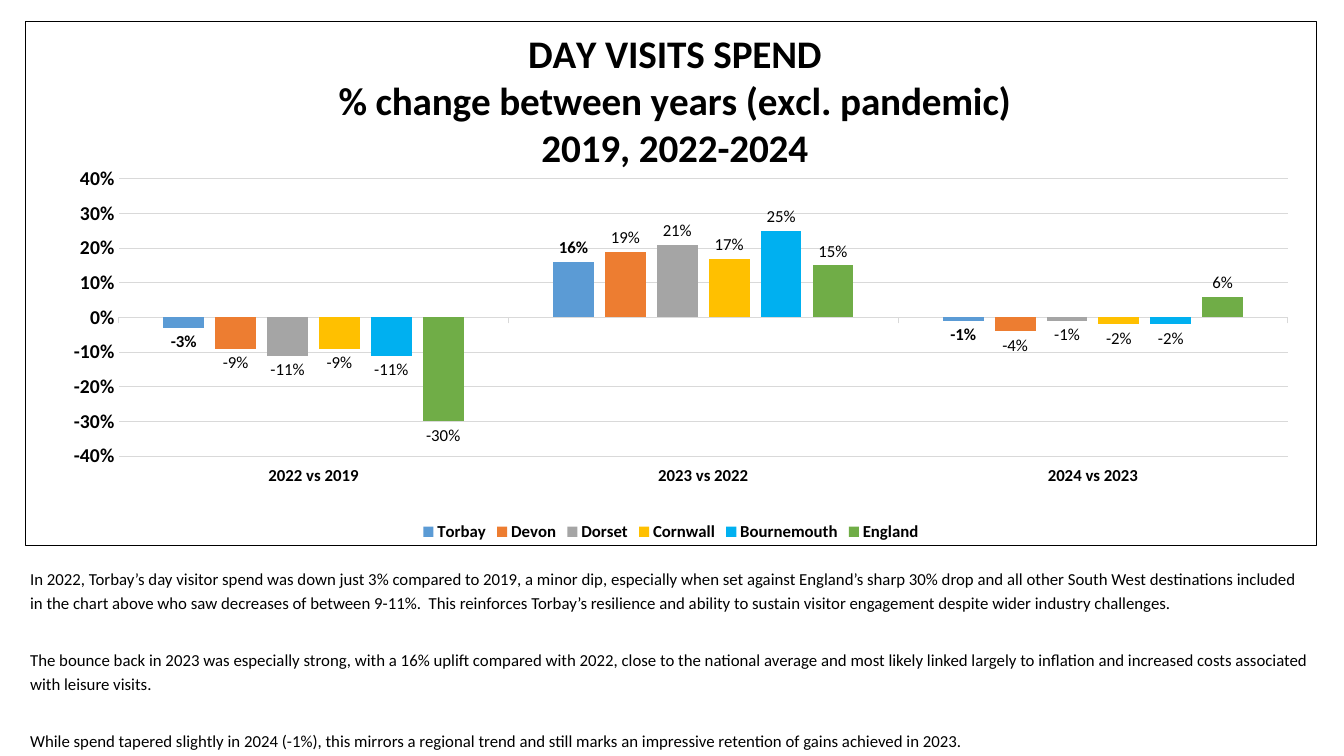
from lxml import etree
from pptx import Presentation
from pptx.chart.data import CategoryChartData
from pptx.dml.color import RGBColor
from pptx.enum.chart import (XL_CHART_TYPE, XL_LABEL_POSITION, XL_LEGEND_POSITION,
                             XL_TICK_LABEL_POSITION, XL_TICK_MARK)
from pptx.oxml import parse_xml
from pptx.oxml.ns import nsdecls, qn
from pptx.util import Inches, Pt

# Content
FONT = "Calibri"
COLORS = {"text": "000000", "grid": "D9D9D9", "Torbay": "5B9BD5", "Devon": "ED7D31",
          "Dorset": "A5A5A5", "Cornwall": "FFC000", "Bournemouth": "00B0F0",
          "England": "70AD47"}
TITLE = ["DAY VISITS SPEND", "% change between years (excl. pandemic)", "2019, 2022-2024"]
PERIODS = ["2022 vs 2019", "2023 vs 2022", "2024 vs 2023"]
SPEND_CHANGE = {
    "Torbay": (-0.03, 0.16, -0.01),
    "Devon": (-0.09, 0.19, -0.04),
    "Dorset": (-0.11, 0.21, -0.01),
    "Cornwall": (-0.09, 0.17, -0.02),
    "Bournemouth": (-0.11, 0.25, -0.02),
    "England": (-0.3, 0.15, 0.06),
}
COMMENTARY = [
    "In 2022, Torbay’s day visitor spend was down just 3% compared to 2019, a minor dip, "
    "especially when set against England’s sharp 30% drop and all other South West "
    "destinations included in the chart above who saw decreases of between 9-11%.  This "
    "reinforces Torbay’s resilience and ability to sustain visitor engagement despite "
    "wider industry challenges.",
    "The bounce back in 2023 was especially strong, with a 16% uplift compared with 2022, "
    "close to the national average and most likely linked largely to inflation and "
    "increased costs associated with leisure visits.",
    "While spend tapered slightly in 2024 (-1%), this mirrors a regional trend and still "
    "marks an impressive retention of gains achieved in 2023.",
]


def rgb(name):
    return RGBColor.from_string(COLORS[name])


def set_font(font, size, bold=False):
    font.name, font.size, font.bold = FONT, Pt(size), bold
    font.color.rgb = rgb("text")


def set_line(line, name):
    line.color.rgb = rgb(name)
    line.width = Pt(0.75)


def set_layout(parent, index, target=None, **fractions):
    """Place a chart part by fractions of the chart area."""
    for old in parent.findall(qn("c:layout")):
        parent.remove(old)
    layout = parse_xml(f"<c:layout {nsdecls('c')}><c:manualLayout/></c:layout>")
    settings = {"layoutTarget": target} if target else {}
    settings.update(xMode="edge", yMode="edge", **fractions)
    for tag, value in settings.items():
        etree.SubElement(layout[0], qn(f"c:{tag}")).set("val", str(value))
    parent.insert(index, layout)


prs = Presentation()
prs.slide_width, prs.slide_height = Inches(13.33), Inches(7.5)
s = prs.slides.add_slide(prs.slide_layouts[6])

# Chart
data = CategoryChartData(number_format="0%")
data.categories = PERIODS
for place, values in SPEND_CHANGE.items():
    data.add_series(place, values)
chart = s.shapes.add_chart(XL_CHART_TYPE.COLUMN_CLUSTERED, Inches(0.25), Inches(0.21),
                           Inches(12.81), Inches(5.21), data).chart
set_font(chart.font, 10)
border = parse_xml(
    f"<c:spPr {nsdecls('c', 'a')}><a:noFill/><a:ln w='{Pt(0.75)}'><a:solidFill>"
    f"<a:srgbClr val='{COLORS['text']}'/></a:solidFill></a:ln></c:spPr>")
chart.element.find(qn("c:txPr")).addprevious(border)

# Chart title
chart.has_title = True
tf = chart.chart_title.text_frame
tf.text = "\n".join(TITLE)
for p in tf.paragraphs:
    set_font(p.font, 28, True)
title = chart.element.chart.find(qn("c:title"))
set_layout(title, 1, x=0.24, y=0.01)
set_layout(chart.element.chart.plotArea, 0, "inner", x=0.072, y=0.3, w=0.906, h=0.529)

# Columns and labels
plot = chart.plots[0]
plot.gap_width, plot.overlap, plot.vary_by_categories = 219, -27, False
for series in plot.series:
    series.invert_if_negative = False
    series.format.fill.solid()
    series.format.fill.fore_color.rgb = rgb(series.name)
    labels = series.data_labels
    labels.show_value = True
    labels.position = XL_LABEL_POSITION.OUTSIDE_END
    labels.number_format, labels.number_format_is_linked = "0%", False
    set_font(labels.font, 12, series.name == "Torbay")

# Axes and legend
periods, percent = chart.category_axis, chart.value_axis
periods.tick_label_position = XL_TICK_LABEL_POSITION.LOW
periods.major_tick_mark = XL_TICK_MARK.OUTSIDE
set_font(periods.tick_labels.font, 12, True)
set_line(periods.format.line, "grid")
percent.minimum_scale, percent.maximum_scale, percent.major_unit = -0.4, 0.4, 0.1
percent.major_tick_mark = XL_TICK_MARK.NONE
percent.tick_labels.number_format = "0%"
percent.tick_labels.number_format_is_linked = False
set_font(percent.tick_labels.font, 14, True)
percent.format.line.fill.background()
set_line(percent.major_gridlines.format.line, "grid")
chart.has_legend = True
chart.legend.position = XL_LEGEND_POSITION.BOTTOM
chart.legend.include_in_layout = False
set_font(chart.legend.font, 12, True)

# Commentary
tf = s.shapes.add_textbox(Inches(0.2), Inches(5.55), Inches(12.89), Inches(1.95)).text_frame
tf.word_wrap = True
tf.text = "\n".join(COMMENTARY)
for i, p in enumerate(tf.paragraphs):
    set_font(p.font, 12)
    p.line_spacing = 1.2
    p.space_before = Pt(23.6 if i else 3.1)

prs.save("out.pptx")
